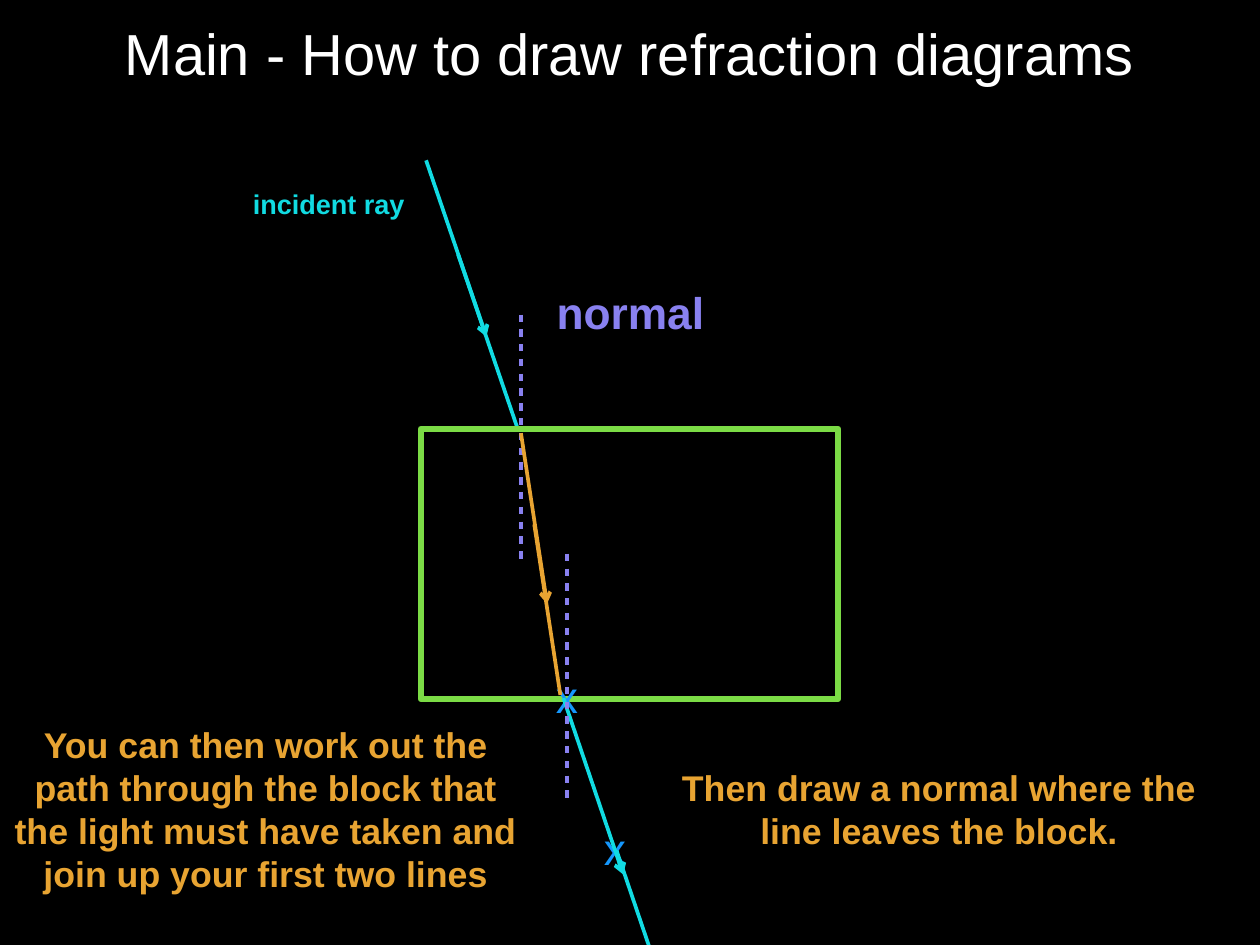
from lxml.etree import SubElement
from pptx import Presentation
from pptx.dml.color import RGBColor
from pptx.enum.shapes import MSO_CONNECTOR, MSO_SHAPE
from pptx.enum.text import MSO_ANCHOR, PP_ALIGN
from pptx.oxml.ns import qn
from pptx.util import Pt

COLOURS = {
    "background": "000000",
    "title": "FFFFFF",
    "ray": "11DBE2",
    "block": "7BDB45",
    "path": "E8A432",
    "normal": "8981F0",
    "cross": "1597FC",
}

# text, left, top, width, height, size, colour, bold, wrap
LABELS = [
    ("Main - How to draw refraction diagrams",
     74.9, -42.5, 874, 170, 47, "title", False, True),
    ("You can then work out the path through the block that the light "
     "must have taken and join up your first two lines",
     -0.7, 583.2, 433.4, 148.3, 29, "path", True, True),
    ("Then draw a normal where the line leaves the block.",
     546.5, 618.5, 433.4, 77.8, 29, "path", True, True),
    ("normal", 317.5, 228.2, 389.5, 51.1, 36, "normal", True, True),
    ("incident ray", 200.9, 148.3, 132.5, 33.8, 22, "ray", True, False),
]
CROSSES = [(447.1, 540), (486, 663.8)]
CROSS_SIZE = (27.4, 51.1)
BLOCK = (342, 348.5, 339.1, 219.6)

# Each ray is an arrowed part and a plain part of the same run:
# arrowed start, plain start, run, colour
INCIDENT = ((346.3, 130.3), (372.2, 206.6), (49, 143.3), "ray")
EXIT = ((457.9, 567.4), (501.1, 691.2), (48.6, 143.3), "ray")
INSIDE = ((423.4, 352.1), (434.2, 426.2), (21.2, 138.6), "path")
NORMALS = [(423.4, 255.6), (460.8, 450)]
NORMAL_LENGTH = 200


def rgb(name):
    return RGBColor.from_string(COLOURS[name])


def add_line(slide, start, run, colour, arrow=False, dashed=False):
    (x, y), (dx, dy) = start, run
    line = slide.shapes.add_connector(
        MSO_CONNECTOR.STRAIGHT, Pt(x), Pt(y), Pt(x + dx), Pt(y + dy))
    line.line.color.rgb = rgb(colour)
    line.line.width = Pt(3)
    props = line._element.spPr
    ln = props.find(qn("a:ln"))
    if dashed:
        dashes = SubElement(ln, qn("a:custDash"))
        SubElement(dashes, qn("a:ds"), d="200000", sp="200000")
    if arrow:
        SubElement(ln, qn("a:tailEnd"), type="arrow")
    SubElement(props, qn("a:effectLst"))


def add_ray(slide, arrow_start, plain_start, run, colour):
    add_line(slide, plain_start, run, colour)
    add_line(slide, arrow_start, run, colour, arrow=True)


def add_normal(slide, start):
    add_line(slide, start, (0, NORMAL_LENGTH), "normal", dashed=True)


def add_label(slide, text, x, y, w, h, size, colour, bold=False, wrap=False):
    box = slide.shapes.add_textbox(Pt(x), Pt(y), Pt(w), Pt(h))
    tf = box.text_frame
    tf.word_wrap = wrap
    tf.vertical_anchor = MSO_ANCHOR.MIDDLE
    tf.margin_left = tf.margin_right = Pt(4)
    tf.margin_top = tf.margin_bottom = Pt(4)
    p = tf.paragraphs[0]
    p.text = text
    p.alignment = PP_ALIGN.CENTER
    p.font.name = "Arial"
    p.font.size = Pt(size)
    p.font.bold = bold
    p.font.color.rgb = rgb(colour)


def add_block(slide):
    block = slide.shapes.add_shape(
        MSO_SHAPE.RECTANGLE, *[Pt(length) for length in BLOCK])
    block.shadow.inherit = False
    block.fill.background()
    block.line.color.rgb = rgb("block")
    block.line.width = Pt(5)
    SubElement(block._element.spPr.find(qn("a:ln")), qn("a:round"))


def main():
    prs = Presentation()
    prs.slide_width, prs.slide_height = Pt(1024), Pt(768)
    slide = prs.slides.add_slide(prs.slide_layouts[6])
    fill = slide.background.fill
    fill.solid()
    fill.fore_color.rgb = rgb("background")

    entry_normal, exit_normal = NORMALS
    add_ray(slide, *INCIDENT)
    add_block(slide)
    add_normal(slide, entry_normal)
    for label in LABELS:
        add_label(slide, *label)
    for x, y in CROSSES:
        add_label(slide, "x", x, y, *CROSS_SIZE, 36, "cross")
    add_ray(slide, *EXIT)
    add_ray(slide, *INSIDE)
    add_normal(slide, exit_normal)
    prs.save("out.pptx")


if __name__ == "__main__":
    main()
